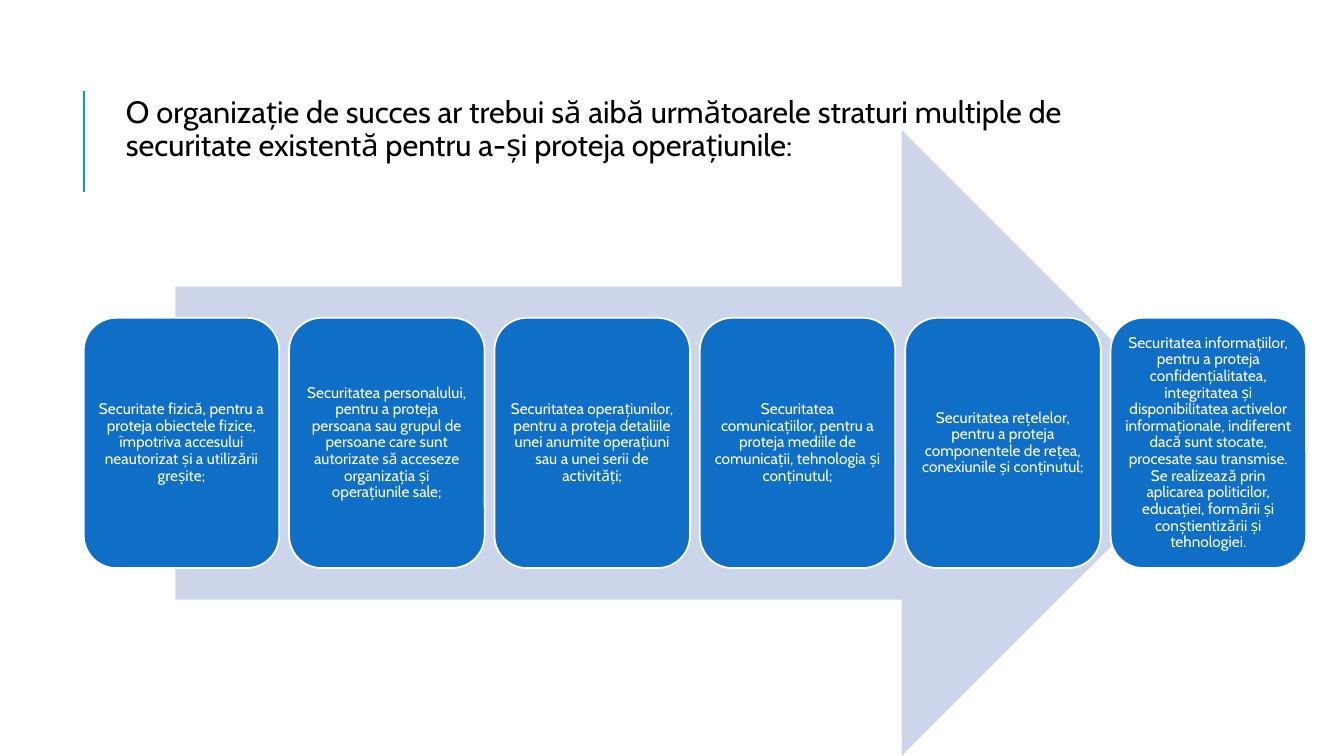
from pptx import Presentation
from pptx.dml.color import RGBColor
from pptx.enum.shapes import MSO_CONNECTOR as Connector, MSO_SHAPE as Shape
from pptx.enum.text import MSO_ANCHOR as Anchor, PP_ALIGN as Align
from pptx.oxml.ns import qn
from pptx.util import Pt
from lxml.etree import SubElement

FONT = "Cabin"
BLACK = RGBColor(0x00, 0x00, 0x00)
WHITE = RGBColor(0xFF, 0xFF, 0xFF)
ACCENT = RGBColor(0x00, 0x9D, 0xD9)
ARROW_FILL = RGBColor(0xCC, 0xD5, 0xEA)
LAYER_FILL = RGBColor(0x0F, 0x6F, 0xC6)

TITLE = ("O organizație de succes ar trebui să aibă următoarele straturi multiple de "
         "securitate existentă pentru a-și proteja operațiunile:")
LAYERS = [
    "Securitate fizică, pentru a proteja obiectele fizice, împotriva accesului "
    "neautorizat și a utilizării greșite;",
    "Securitatea personalului, pentru a proteja persoana sau grupul de persoane "
    "care sunt autorizate să acceseze organizația și operațiunile sale;",
    "Securitatea operațiunilor, pentru a proteja detaliile unei anumite operațiuni "
    "sau a unei serii de activități;",
    "Securitatea comunicațiilor, pentru a proteja mediile de comunicații, "
    "tehnologia și conținutul;",
    "Securitatea rețelelor, pentru a proteja componentele de rețea, conexiunile "
    "și conținutul;",
    "Securitatea informațiilor, pentru a proteja confidențialitatea, integritatea "
    "și disponibilitatea activelor informaționale, indiferent dacă sunt stocate, "
    "procesate sau transmise. Se realizează prin aplicarea politicilor, educației, "
    "formării și conștientizării și tehnologiei.",
]
LAYER_LEFT, LAYER_PITCH = 59.8, 146.7


def write_text(box, text, size, color, align, anchor):
    frame = box.text_frame
    frame.word_wrap = True
    frame.vertical_anchor = anchor
    frame.margin_left = frame.margin_right = Pt(3.6)
    frame.margin_top = frame.margin_bottom = Pt(3.6)
    frame.text = text
    para = frame.paragraphs[0]
    para.alignment = align
    para.line_spacing = 0.9
    font = para.runs[0].font
    font.name = FONT
    font.size = Pt(size)
    font.color.rgb = color


def add_title(page):
    box = page.shapes.add_textbox(Pt(79.2), Pt(65.5), Pt(742.3), Pt(63.4))
    write_text(box, TITLE, 22, BLACK, Align.LEFT, Anchor.TOP)
    box.text_frame.margin_left = Pt(10.8)


def add_accent_line(page):
    line = page.shapes.add_connector(Connector.STRAIGHT, Pt(60), Pt(136.8), Pt(60), Pt(64.8))
    line.line.color.rgb = ACCENT
    line.line.width = Pt(1.5)
    SubElement(line.element.spPr, qn("a:effectLst"))


def add_filled_shape(page, kind, left, top, width, height, color):
    shape = page.shapes.add_shape(kind, Pt(left), Pt(top), Pt(width), Pt(height))
    shape.shadow.inherit = False
    shape.fill.solid()
    shape.fill.fore_color.rgb = color
    return shape


def add_layer(page, left, text):
    box = add_filled_shape(page, Shape.ROUNDED_RECTANGLE, left, 227, 139.7, 178.8, LAYER_FILL)
    box.line.color.rgb = WHITE
    box.line.width = Pt(1.25)
    write_text(box, text, 11, WHITE, Align.CENTER, Anchor.MIDDLE)


def main():
    deck = Presentation()
    deck.slide_width, deck.slide_height = Pt(960), Pt(540)
    page = deck.slides.add_slide(deck.slide_layouts[6])

    # Heading
    add_accent_line(page)
    add_title(page)

    # Arrow behind the layers
    arrow = add_filled_shape(page, Shape.RIGHT_ARROW, 125.3, 93, 742.3, 447, ARROW_FILL)
    arrow.line.fill.background()

    # Security layers, evenly spaced
    for index, text in enumerate(LAYERS):
        add_layer(page, LAYER_LEFT + index * LAYER_PITCH, text)

    deck.save("out.pptx")


if __name__ == "__main__":
    main()
